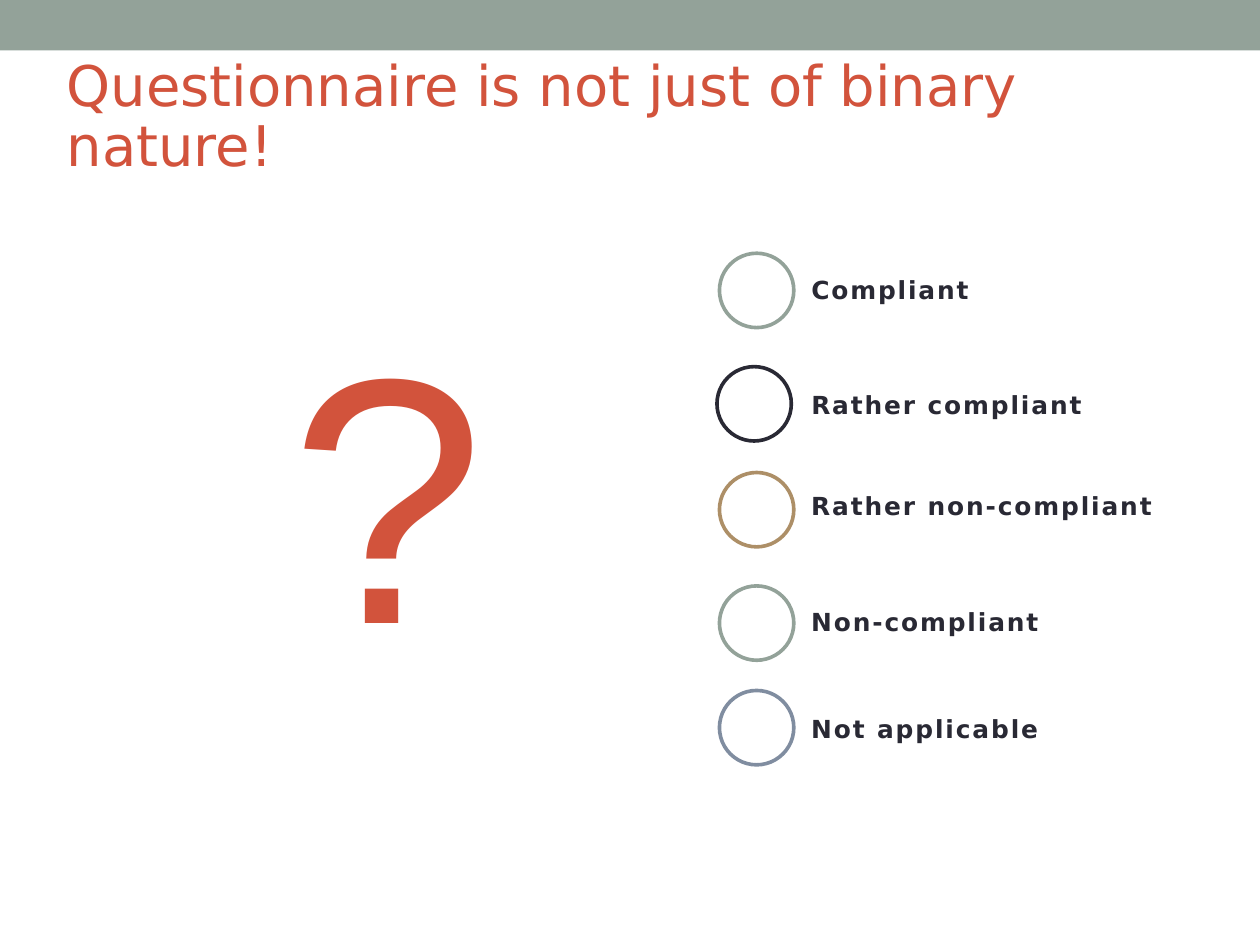
from pptx import Presentation
from pptx.dml.color import RGBColor
from pptx.enum.shapes import MSO_SHAPE
from pptx.enum.text import MSO_ANCHOR, PP_ALIGN
from pptx.util import Inches, Pt

RECTANGLE, OVAL = MSO_SHAPE.RECTANGLE, MSO_SHAPE.OVAL
TOP, MIDDLE = MSO_ANCHOR.TOP, MSO_ANCHOR.MIDDLE
LEFT, CENTER = PP_ALIGN.LEFT, PP_ALIGN.CENTER

SAGE, RED, DARK = "93A299", "D2533C", "292934"
TAN, SLATE, WHITE = "AD8F67", "808DA0", "FFFFFF"
CIRCLE_SIZE = 0.59
LABEL_HEIGHT = 0.34

# Answer text, circle colour, circle left and top, label top and width
ANSWERS = [
    ("Compliant", SAGE, 5.71, 2.01, 2.13, 1.48),
    ("Rather compliant", DARK, 5.69, 2.91, 3.04, 2.39),
    ("Rather non-compliant", TAN, 5.71, 3.75, 3.84, 2.97),
    ("Non-compliant", SAGE, 5.71, 4.65, 4.76, 2.06),
    ("Not applicable", SLATE, 5.71, 5.48, 5.61, 2.03),
]


def color(value):
    return RGBColor.from_string(value)


def add_shape(page, kind, box, fill, line=None):
    shape = page.shapes.add_shape(kind, *map(Inches, box))
    shape.shadow.inherit = False
    shape.fill.solid()
    shape.fill.fore_color.rgb = color(fill)
    if line:
        shape.line.color.rgb = color(line)
        shape.line.width = Pt(2.08)
    else:
        shape.line.fill.background()


def add_text(page, box, text, size, ink, font="DejaVu Sans", bold=False,
             align=LEFT, anchor=TOP, wrap=True, line_spacing=None,
             letter_spacing=None, margin_top=0.05):
    frame = page.shapes.add_textbox(*map(Inches, box)).text_frame
    frame.word_wrap = wrap
    frame.vertical_anchor = anchor
    frame.margin_top = Inches(margin_top)
    para = frame.paragraphs[0]
    para.alignment = align
    if line_spacing:
        para.line_spacing = line_spacing
    span = para.add_run()
    span.text = text
    span.font.name = font
    span.font.size = Pt(size)
    span.font.bold = bold
    span.font.color.rgb = color(ink)
    if letter_spacing:
        # Letter spacing is stored in hundredths of a point
        span.font._element.set("spc", str(round(letter_spacing * 100)))


def add_header(page, band, title):
    add_shape(page, RECTANGLE, band, SAGE)
    add_text(page, title, "Questionnaire is not just of binary nature!",
             32, RED, line_spacing=0.9)


def add_question_mark(page, box):
    add_text(page, box, "?", 200, RED, font="Arial", align=CENTER,
             margin_top=0.31)


def add_answers(page, label_left):
    for text, ring, left, top, label_top, width in ANSWERS:
        add_shape(page, OVAL, (left, top, CIRCLE_SIZE, CIRCLE_SIZE),
                  WHITE, line=ring)
        add_text(page, (label_left, label_top, width, LABEL_HEIGHT), text,
                 14.2, DARK, bold=True, anchor=MIDDLE, wrap=False,
                 letter_spacing=1.1)


def main():
    deck = Presentation()
    deck.slide_width, deck.slide_height = Inches(10), Inches(7.5)
    page = deck.slides.add_slide(deck.slide_layouts[6])
    add_header(page, band=(0, 0, 10, 0.4), title=(0.43, 0.41, 9.15, 1.45))
    add_question_mark(page, (0.91, 1.86, 4.33, 4.21))
    add_answers(page, label_left=6.34)
    deck.save("out.pptx")


if __name__ == "__main__":
    main()
